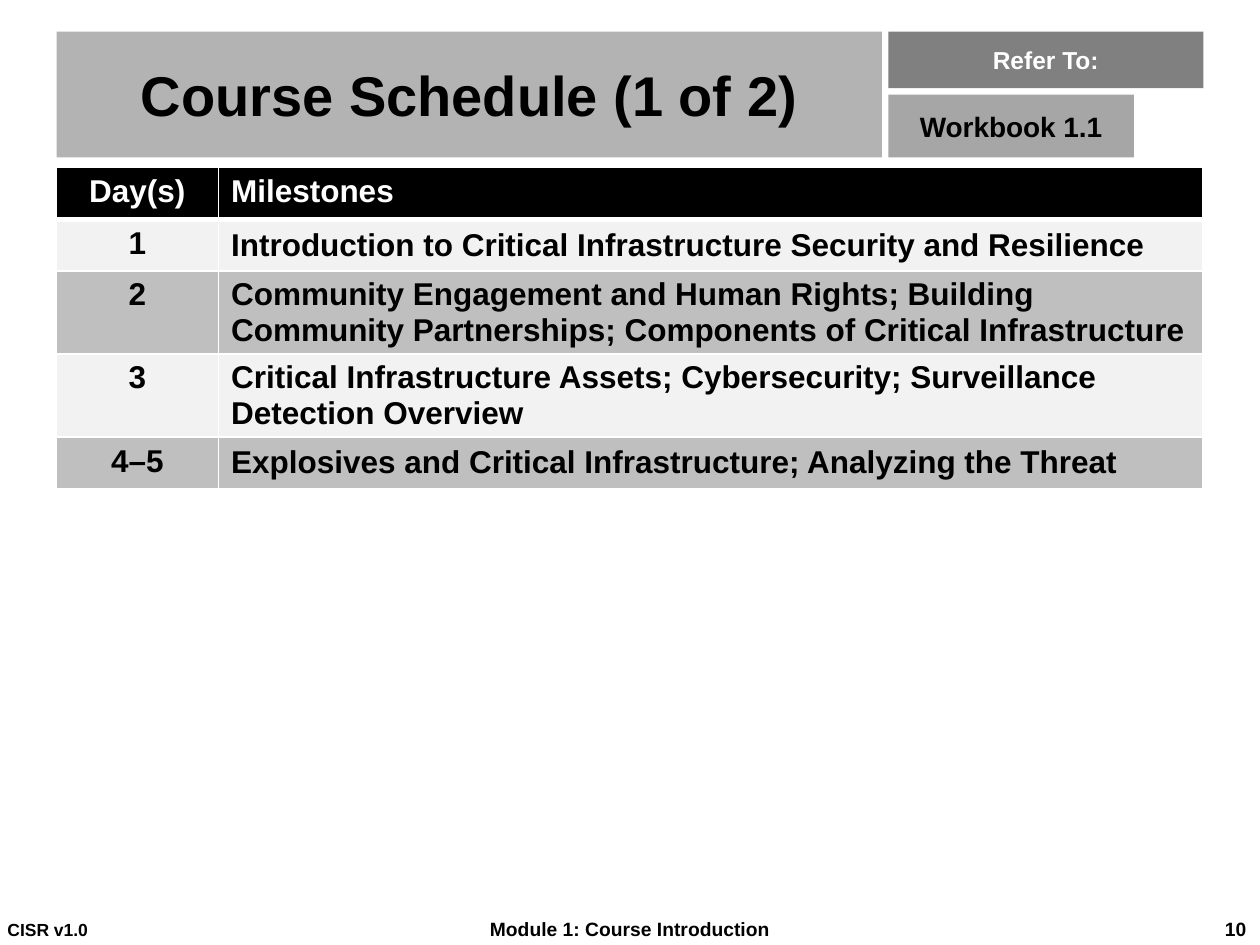
from dataclasses import dataclass

import lxml.etree
import pptx
import pptx.dml.color
import pptx.enum.text
import pptx.oxml.ns
import pptx.util

Pt = pptx.util.Pt
Align = pptx.enum.text.PP_ALIGN
Anchor = pptx.enum.text.MSO_ANCHOR


@dataclass(frozen=True)
class Theme:
    font: str = "Arial"
    black: str = "000000"
    white: str = "FFFFFF"
    title_fill: str = "B3B3B3"
    refer_fill: str = "808080"
    lesson_fill: str = "A6A6A6"
    row_fills: tuple[str, str] = ("F2F2F2", "BFBFBF")
    title_size: float = 32
    table_size: float = 18
    lesson_size: float = 16
    refer_size: float = 14
    footer_size: float = 11
    version_size: float = 10


@dataclass(frozen=True)
class Label:
    """A line of text in a box; box and insets are in points."""
    text: str
    box: tuple[float, float, float, float]
    size: float
    insets: tuple[float, float, float, float]
    align: Align = Align.CENTER
    color: str = "000000"
    fill: str | None = None


@dataclass(frozen=True)
class Milestone:
    days: str
    topics: str


THEME = Theme()
TIGHT = (0.72, 0.72, 0.72, 0.72)
FOOTER_INSETS = (7.2, 0.72, 7.2, 0.72)
HEADINGS = [
    Label("Course Schedule (1 of 2)", (32.4, 18, 471.6, 72), THEME.title_size,
          (7.2, 3.6, 7.2, 3.6), fill=THEME.title_fill),
    Label("Refer To:", (507.6, 18, 180, 32.4), THEME.refer_size, TIGHT,
          color=THEME.white, fill=THEME.refer_fill),
    Label("Workbook 1.1", (507.6, 54, 140.4, 36), THEME.lesson_size, TIGHT,
          fill=THEME.lesson_fill),
]
FOOTERS = [
    Label("CISR v1.0", (3.6, 522, 223.2, 18), THEME.version_size,
          (0.72, 0.72, 3.6, 0.72), Align.LEFT),
    Label("Module 1: Course Introduction", (234, 522, 252, 18),
          THEME.footer_size, FOOTER_INSETS),
    Label("10", (687.6, 522, 31.7, 18), THEME.footer_size, FOOTER_INSETS,
          Align.RIGHT),
]
MILESTONES = [
    Milestone("1", "Introduction to Critical Infrastructure Security and Resilience"),
    Milestone("2", "Community Engagement and Human Rights; Building Community "
                   "Partnerships; Components of Critical Infrastructure"),
    Milestone("3", "Critical Infrastructure Assets; Cybersecurity; "
                   "Surveillance Detection Overview"),
    Milestone("4–5", "Explosives and Critical Infrastructure; Analyzing the Threat"),
]
TABLE_LEFT, TABLE_TOP = 32, 95.8
COLUMN_WIDTHS = (92.9, 562.3)
ROW_HEIGHT = 29.5


def rgb(color: str) -> pptx.dml.color.RGBColor:
    return pptx.dml.color.RGBColor.from_string(color)


def paint(target, color: str) -> None:
    target.fill.solid()
    target.fill.fore_color.rgb = rgb(color)


def write(frame, text: str, size: float, color: str, align: Align) -> None:
    para = frame.paragraphs[0]
    para.alignment = align
    span = para.add_run()
    span.text = text
    span.font.name = THEME.font
    span.font.size = Pt(size)
    span.font.bold = True
    span.font.color.rgb = rgb(color)


def fill_label(shape, label: Label) -> None:
    shape.left, shape.top, shape.width, shape.height = map(Pt, label.box)
    if label.fill:
        paint(shape, label.fill)
    frame = shape.text_frame
    frame.word_wrap = True
    frame.auto_size = pptx.enum.text.MSO_AUTO_SIZE.NONE
    frame.vertical_anchor = Anchor.MIDDLE
    (frame.margin_left, frame.margin_top,
     frame.margin_right, frame.margin_bottom) = map(Pt, label.insets)
    write(frame, label.text, label.size, label.color, label.align)


def remove_bullet(para) -> None:
    properties = para._p.get_or_add_pPr()
    properties.set("marL", "0")
    properties.set("indent", "0")
    lxml.etree.SubElement(properties, pptx.oxml.ns.qn("a:buNone"))
    para.space_before = Pt(0)


def add_borders(cell, color: str, bottom: float) -> None:
    """Draw 1 point borders, with a bottom border of its own width."""
    properties = cell._tc.get_or_add_tcPr()
    for side, width in (("L", 1), ("R", 1), ("T", 1), ("B", bottom)):
        line = lxml.etree.SubElement(
            properties, pptx.oxml.ns.qn(f"a:ln{side}"), w=str(Pt(width)))
        solid = lxml.etree.SubElement(line, pptx.oxml.ns.qn("a:solidFill"))
        lxml.etree.SubElement(solid, pptx.oxml.ns.qn("a:srgbClr"), val=color)


def add_schedule(page) -> None:
    rows = [Milestone("Day(s)", "Milestones"), *MILESTONES]
    table = page.shapes.add_table(
        len(rows), len(COLUMN_WIDTHS), Pt(TABLE_LEFT), Pt(TABLE_TOP),
        Pt(sum(COLUMN_WIDTHS)), Pt(ROW_HEIGHT * len(rows))).table
    for column, width in zip(table.columns, COLUMN_WIDTHS):
        column.width = Pt(width)
    for index, milestone in enumerate(rows):
        table.rows[index].height = Pt(ROW_HEIGHT)
        header = index == 0
        fill = THEME.black if header else THEME.row_fills[(index - 1) % 2]
        color = THEME.white if header else THEME.black
        topic_anchor = Anchor.TOP if header else Anchor.MIDDLE
        columns = ((milestone.days, Align.CENTER, Anchor.TOP),
                   (milestone.topics, Align.LEFT, topic_anchor))
        for number, (text, align, anchor) in enumerate(columns):
            cell = table.cell(index, number)
            add_borders(cell, THEME.white, 3 if header else 1)
            paint(cell, fill)
            cell.vertical_anchor = anchor
            write(cell.text_frame, text, THEME.table_size, color, align)


def main() -> None:
    deck = pptx.Presentation()
    deck.slide_width, deck.slide_height = Pt(720), Pt(540)
    page = deck.slides.add_slide(deck.slide_layouts.get_by_name("Two Content"))
    title, *bodies = page.placeholders
    for body in bodies:
        remove_bullet(body.text_frame.paragraphs[0])
    for shape, label in zip((title, *bodies), HEADINGS):
        fill_label(shape, label)
    add_schedule(page)
    for label in FOOTERS:
        fill_label(page.shapes.add_textbox(*map(Pt, label.box)), label)
    deck.save("out.pptx")


if __name__ == "__main__":
    main()
